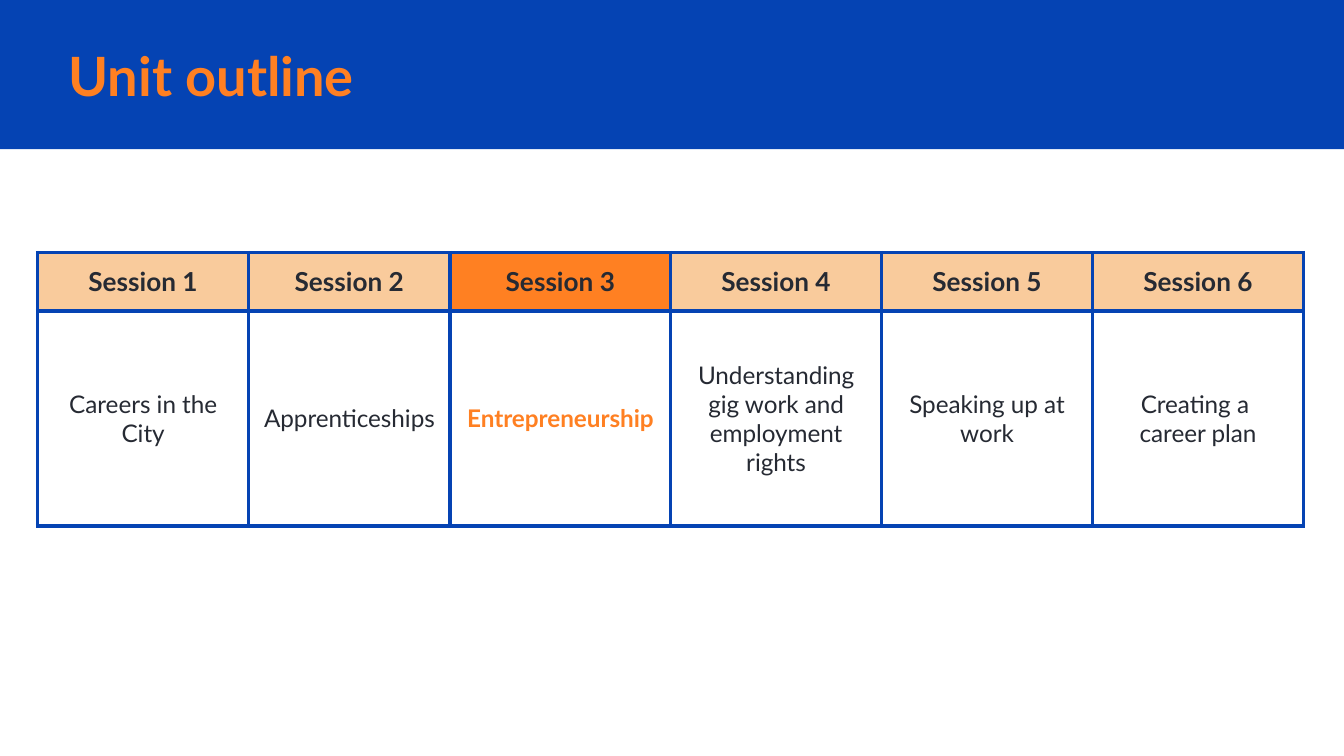
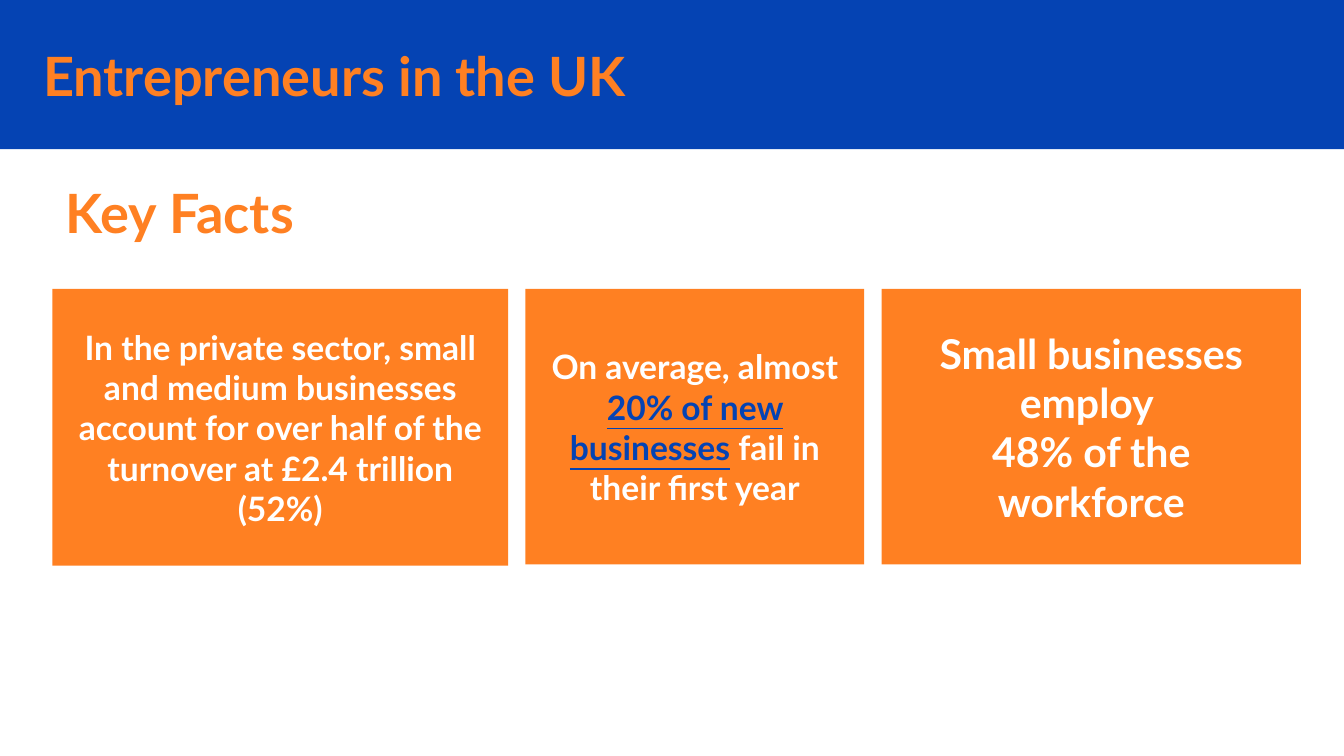
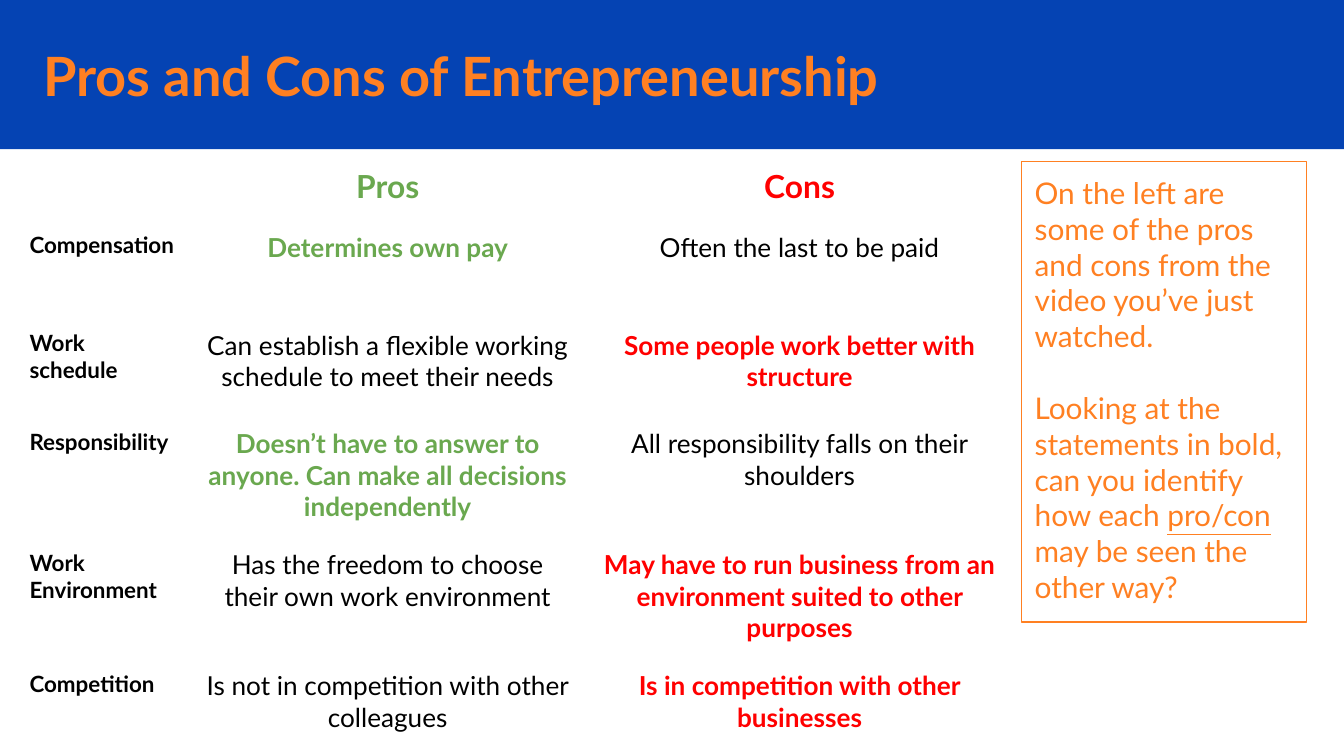
from dataclasses import dataclass

from lxml.etree import SubElement
from pptx import Presentation
from pptx.dml.color import RGBColor
from pptx.enum.shapes import MSO_SHAPE
from pptx.enum.text import MSO_ANCHOR, MSO_AUTO_SIZE, PP_ALIGN
from pptx.oxml.ns import qn
from pptx.util import Inches, Pt


@dataclass(frozen=True)
class Theme:
    font: str = "Lato"
    blue: str = "0543B3"
    orange: str = "FF8022"
    peach: str = "F9CB9C"
    ink: str = "262A33"
    black: str = "000000"
    white: str = "FFFFFF"
    green: str = "6AA84F"
    red: str = "FF0000"
    title: int = 29
    big_fact: int = 22
    fact: int = 18
    column_head: int = 17
    prompt: int = 16
    body: int = 14
    session: int = 13
    row_head: int = 12


T = Theme()

# Content
SESSIONS = [
    ("Session 1", ["Careers in the City"], 1.57),
    ("Session 2", ["Apprenticeships"], 1.5),
    ("Session 3", ["Entrepreneurship"], 1.64),
    ("Session 4", ["Understanding gig work and employment rights"], 1.57),
    ("Session 5", ["Speaking up at work"], 1.57),
    ("Session 6", ["Creating a ", "career plan"], 1.57),
]
CURRENT_SESSION = "Session 3"

# Each fact: width, height, type size, paragraphs of (text, highlighted) runs
FACTS = [
    (3.39, 2.06, T.fact, [[("In the private sector, small and medium businesses account "
                            "for over half of the turnover at £2.4 trillion (52%)", False)]]),
    (2.52, 2.05, T.fact, [[("On average, almost ", False), ("20% of new businesses", True),
                           (" fail in their first year", False)]]),
    (3.12, 2.05, T.big_fact, [[("Small businesses employ ", False)],
                              [("48% of the workforce", False)]]),
]

# Each row: heading, pro, con, and which of the two are in bold
PROS_CONS = [
    ("Compensation", "Determines own pay", "Often the last to be paid", ("pro",)),
    ("Work schedule", "Can establish a flexible working schedule to meet their needs",
     "Some people work better with structure", ("con",)),
    ("Responsibility", "Doesn’t have to answer to anyone. Can make all decisions independently",
     "All responsibility falls on their shoulders", ("pro",)),
    ("Work Environment", "Has the freedom to choose their own work environment",
     "May have to run business from an environment suited to other purposes", ("con",)),
    ("Competition", "Is not in competition with other colleagues",
     "Is in competition with other businesses", ("con",)),
]
PROMPT = [
    [("On the left are some of the pros and cons from the video you’ve just watched.", False)],
    [("Looking at the statements in bold, can you identify how each ", False),
     ("pro/con", True), (" may be seen the other way?", False)],
]


# Shared helpers
def rgb(value):
    return RGBColor.from_string(value)


def add_run(p, text, size, color, bold=False, underline=False):
    r = p.add_run()
    r.text = text
    r.font.name, r.font.size = T.font, Pt(size)
    r.font.color.rgb = rgb(color)
    r.font.bold, r.font.underline = bold, underline


def add_paragraphs(tf, count, align):
    for i in range(count):
        p = tf.paragraphs[0] if i == 0 else tf.add_paragraph()
        p.alignment = align
        yield p


def set_frame(tf, anchor):
    tf.word_wrap = True
    tf.auto_size = MSO_AUTO_SIZE.NONE
    tf.vertical_anchor = anchor
    tf.margin_left = tf.margin_right = tf.margin_top = tf.margin_bottom = Inches(0.1)


def add_rect(slide, x, y, w, h, fill=None, line=None):
    sp = slide.shapes.add_shape(MSO_SHAPE.RECTANGLE, Inches(x), Inches(y), Inches(w), Inches(h))
    sp.shadow.inherit = False
    if fill:
        sp.fill.solid()
        sp.fill.fore_color.rgb = rgb(fill)
    else:
        sp.fill.background()
    if line:
        sp.line.color.rgb = rgb(line)
        sp.line.width = Pt(0.75)
    else:
        sp.line.fill.background()
    return sp


def write_heading(sp, text, x, y, w):
    sp.left, sp.top, sp.width, sp.height = Inches(x), Inches(y), Inches(w), Inches(0.56)
    set_frame(sp.text_frame, MSO_ANCHOR.MIDDLE)
    for p in add_paragraphs(sp.text_frame, 1, PP_ALIGN.LEFT):
        add_run(p, text, T.title, T.orange, bold=True)


def new_slide(prs, layout, title, x=0.22, w=8.65):
    s = prs.slides.add_slide(layout)
    write_heading(s.shapes.title, title, x, 0.28, w)
    return s


def add_grid(slide, x, y, widths, heights):
    frame = slide.shapes.add_table(len(heights), len(widths), Inches(x), Inches(y),
                                   Inches(sum(widths)), Inches(sum(heights)))
    table = frame.table
    table.first_row = table.horz_banding = False
    for column, w in zip(table.columns, widths):
        column.width = Inches(w)
    for row, h in zip(table.rows, heights):
        row.height = Inches(h)
    return table


def write_cell(cell, lines, size, color, bold=False, align=PP_ALIGN.CENTER,
               anchor=MSO_ANCHOR.TOP, fill=None):
    cell.margin_left = cell.margin_right = cell.margin_top = cell.margin_bottom = Inches(0.1)
    cell.vertical_anchor = anchor
    if fill:
        cell.fill.solid()
        cell.fill.fore_color.rgb = rgb(fill)
    else:
        cell.fill.background()
    for p, text in zip(add_paragraphs(cell.text_frame, len(lines), align), lines):
        add_run(p, text, size, color, bold)


def add_borders(cell, color, width):
    tc_pr = cell._tc.get_or_add_tcPr()
    for i, side in enumerate(("lnL", "lnR", "lnT", "lnB")):
        ln = SubElement(tc_pr, qn(f"a:{side}"), w=str(Pt(width)))
        SubElement(SubElement(ln, qn("a:solidFill")), qn("a:srgbClr"), val=color)
        tc_pr.insert(i, ln)


# Slides
def build_outline(prs, layout):
    s = new_slide(prs, layout, "Unit outline", x=0.41, w=8.46)
    table = add_grid(s, 0.28, 1.88, [w for _, _, w in SESSIONS], [0.43, 1.6])
    for col, (session, topic, _) in enumerate(SESSIONS):
        current = session == CURRENT_SESSION
        write_cell(table.cell(0, col), [session], T.body, T.ink, bold=True,
                   fill=T.orange if current else T.peach)
        write_cell(table.cell(1, col), topic, T.session, T.orange if current else T.ink,
                   bold=current, anchor=MSO_ANCHOR.MIDDLE, fill=T.white)
    for cell in table.iter_cells():
        add_borders(cell, T.blue, 2.25)


def build_facts(prs, layout):
    s = new_slide(prs, layout, "Entrepreneurs in the UK")
    write_heading(s.shapes.add_textbox(0, 0, 0, 0), "Key Facts", 0.39, 1.3, 8.65)
    x, gap = 0.39, 0.13
    for w, h, size, paragraphs in FACTS:
        tf = add_rect(s, x, 2.15, w, h, fill=T.orange).text_frame
        set_frame(tf, MSO_ANCHOR.MIDDLE)
        for p, runs in zip(add_paragraphs(tf, len(paragraphs), PP_ALIGN.CENTER), paragraphs):
            for text, marked in runs:
                add_run(p, text, size, T.blue if marked else T.white, True, marked)
        x += w + gap


def build_pros_cons(prs, layout):
    s = new_slide(prs, layout, "Pros and Cons of Entrepreneurship")

    # Comparison table
    table = add_grid(s, 0.12, 1.14, [1.29, 2.95, 3.18], [0.47] + [0.73] * 4 + [0.47])
    heads = [("", T.black), ("Pros", T.green), ("Cons", T.red)]
    for col, (head, color) in enumerate(heads):
        write_cell(table.cell(0, col), [head], T.column_head, color, bold=True)
    for row, (topic, pro, con, bold_sides) in enumerate(PROS_CONS, start=1):
        write_cell(table.cell(row, 0), [topic], T.row_head, T.black, True, PP_ALIGN.LEFT)
        sides = [("pro", pro, T.green), ("con", con, T.red)]
        for col, (side, text, color) in enumerate(sides, start=1):
            bold = side in bold_sides
            write_cell(table.cell(row, col), [text], T.body, color if bold else T.black, bold)

    # Discussion prompt
    tf = add_rect(s, 7.6, 1.2, 2.12, 3.43, line=T.orange).text_frame
    set_frame(tf, MSO_ANCHOR.TOP)
    for i, p in enumerate(add_paragraphs(tf, len(PROMPT), PP_ALIGN.LEFT)):
        if i:
            p.space_before = Pt(19.2)
        for text, underlined in PROMPT[i]:
            add_run(p, text, T.prompt, T.orange, underline=underlined)


def main():
    prs = Presentation()
    prs.slide_width = Inches(10)
    prs.slide_height = prs.slide_width * 9 // 16
    layout = prs.slide_layouts.get_by_name("Title Only")
    build_outline(prs, layout)
    build_facts(prs, layout)
    build_pros_cons(prs, layout)

    # Title band, moved to the layout so that every slide shares it
    band = add_rect(prs.slides[0], 0, 0, 10, 1.11, fill=T.blue)
    layout.shapes.element.insert(2, band.element)
    prs.save("out.pptx")


if __name__ == "__main__":
    main()
